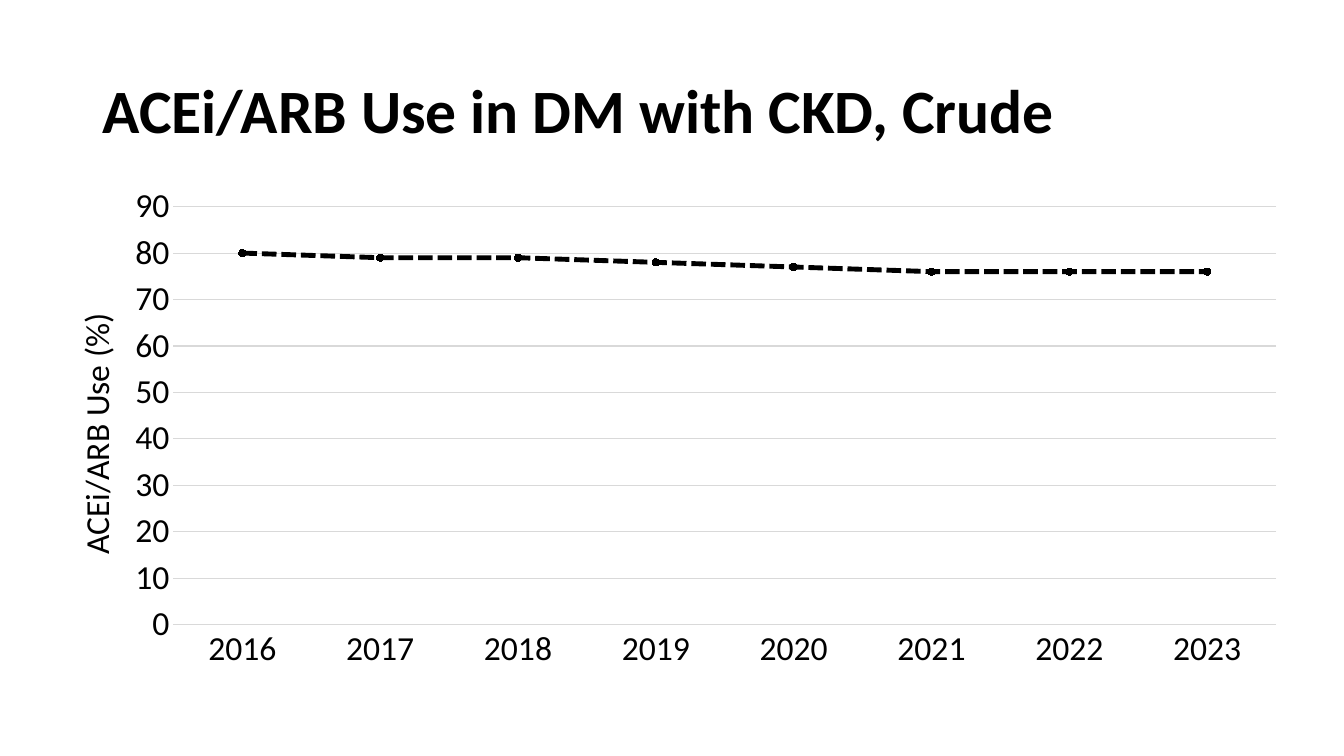
from dataclasses import dataclass

from lxml.etree import SubElement
from pptx import Presentation
from pptx.chart.data import CategoryChartData
from pptx.dml.color import RGBColor
from pptx.enum.chart import XL_CHART_TYPE, XL_MARKER_STYLE, XL_TICK_MARK
from pptx.enum.dml import MSO_LINE
from pptx.enum.text import MSO_ANCHOR
from pptx.oxml import parse_xml
from pptx.oxml.ns import nsdecls, qn
from pptx.util import Inches, Pt


@dataclass(frozen=True)
class Theme:
    font: str = "Calibri"
    ink: RGBColor = RGBColor(0, 0, 0)
    grid: RGBColor = RGBColor(0xD9, 0xD9, 0xD9)
    title_size: int = 44
    chart_size: int = 24
    grid_width: float = 0.75
    series_width: float = 3.5
    marker_size: int = 5


THEME = Theme()
SLIDE_W, SLIDE_H = 13.33, 7.5
TITLE_BOX = (0.92, 0.4, 11.5, 1.45)
CHART_BOX = (0.42, 1.75, 12.5, 5)
YEARS = [str(year) for year in range(2016, 2024)]
USE_PERCENT = [80, 79, 79, 78, 77, 76, 76, 76]


def set_font(font, size, bold=False):
    for name, value in {"name": THEME.font, "size": Pt(size), "bold": bold}.items():
        setattr(font, name, value)
    font.color.rgb = THEME.ink


def set_line(line, color, width):
    line.color.rgb = color
    line.width = Pt(width)


def set_layout(parent, **shares):
    """Place a chart part by shares of the chart's width and height."""
    layout = parent.find(qn("c:layout"))
    if layout is None:
        layout = parse_xml(f"<c:layout {nsdecls('c')}/>")
        parent.insert(0, layout)
    manual = SubElement(layout, qn("c:manualLayout"))
    values = {"xMode": "edge", "yMode": "edge", **shares}
    if "w" in shares:
        values = {"layoutTarget": "inner", **values}
    for tag, value in values.items():
        SubElement(manual, qn(f"c:{tag}")).set("val", str(value))


def add_title(s, box, text):
    tf = s.shapes.add_textbox(*map(Inches, box)).text_frame
    tf.word_wrap = True
    tf.vertical_anchor = MSO_ANCHOR.MIDDLE
    p = tf.paragraphs[0]
    p.line_spacing = 0.9
    r = p.add_run()
    r.text = text
    set_font(r.font, THEME.title_size, bold=True)


def style_axes(chart, value_title):
    years, percent = chart.category_axis, chart.value_axis
    for axis in (years, percent):
        axis.major_tick_mark = axis.minor_tick_mark = XL_TICK_MARK.NONE
        set_font(axis.tick_labels.font, THEME.chart_size)
    set_line(years.format.line, THEME.grid, THEME.grid_width)

    for name, value in {"minimum_scale": 0, "maximum_scale": 90, "major_unit": 10,
                        "has_major_gridlines": True}.items():
        setattr(percent, name, value)
    percent.format.line.fill.background()
    set_line(percent.major_gridlines.format.line, THEME.grid, THEME.grid_width)
    title = percent.axis_title
    p = title.text_frame.paragraphs[0]
    r = p.add_run()
    r.text = value_title
    set_font(r.font, THEME.chart_size)
    set_layout(title.element, x=0.02, y=0.26)


def style_series(series):
    series.smooth = False
    set_line(series.format.line, THEME.ink, THEME.series_width)
    series.format.line.dash_style = MSO_LINE.SQUARE_DOT
    marker = series.marker
    marker.style = XL_MARKER_STYLE.CIRCLE
    marker.size = THEME.marker_size
    marker.format.fill.solid()
    marker.format.fill.fore_color.rgb = THEME.ink
    set_line(marker.format.line, THEME.ink, THEME.grid_width)


def add_use_chart(s, box):
    data = CategoryChartData()
    data.categories = YEARS
    data.add_series("Series 1", USE_PERCENT)
    chart = s.shapes.add_chart(XL_CHART_TYPE.LINE_MARKERS, *map(Inches, box), data).chart
    chart.has_legend = chart.has_title = False
    set_font(chart.font, THEME.chart_size)
    plot = chart.plots[0]
    plot.vary_by_categories = False
    style_axes(chart, "ACEi/ARB Use (%)")
    style_series(plot.series[0])
    plot_area = chart.element.find(f"{qn('c:chart')}/{qn('c:plotArea')}")
    set_layout(plot_area, x=0.104, y=0.06, w=0.875, h=0.83)


def main():
    prs = Presentation()
    prs.slide_width, prs.slide_height = Inches(SLIDE_W), Inches(SLIDE_H)
    s = prs.slides.add_slide(prs.slide_layouts[6])
    add_title(s, TITLE_BOX, "ACEi/ARB Use in DM with CKD, Crude")
    add_use_chart(s, CHART_BOX)
    prs.save("out.pptx")


if __name__ == "__main__":
    main()
